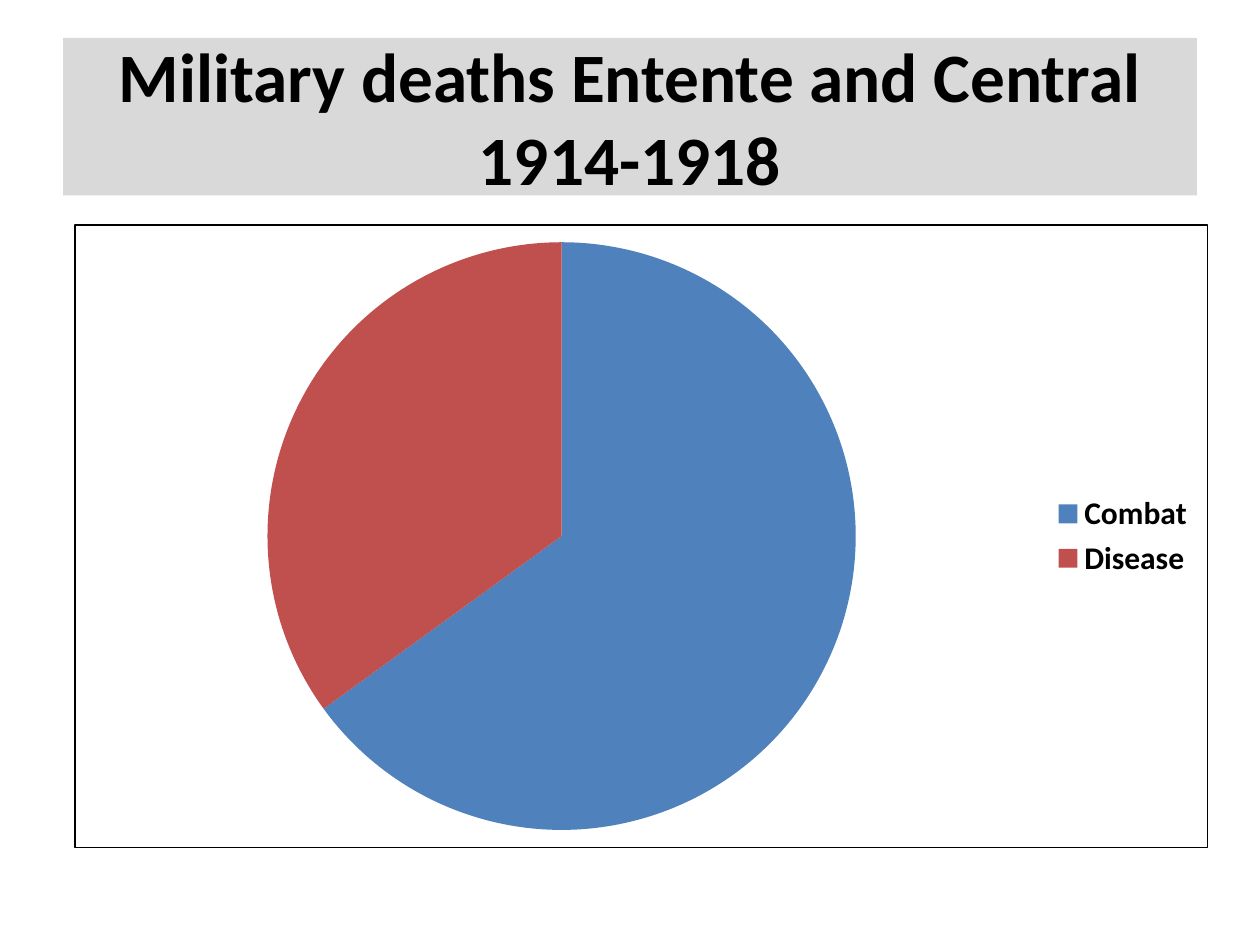
from dataclasses import dataclass

from lxml import etree
from pptx import Presentation
from pptx import util as u
from pptx.chart.data import CategoryChartData
from pptx.dml.color import RGBColor
from pptx.enum import chart as charts, text

TITLE = "Military deaths Entente and Central 1914-1918"
DEATHS = {"Combat": 65, "Disease": 35}
TITLE_BOX = (0.5, 0.3, 9, 1.25)
CHART_BOX = (0.59, 1.78, 9, 4.95)


@dataclass(frozen=True)
class Theme:
    font: str = "Calibri"
    ink: str = "000000"
    title_fill: str = "D9D9D9"
    slices: tuple = ("4F81BD", "C0504D")
    title_size: float = 39.6
    legend_size: float = 18
    border_width: float = 0.75


THEME = Theme()


def inches(box):
    return [u.Inches(length) for length in box]


def style_font(font, size):
    font.name = THEME.font
    font.size = u.Pt(size)
    font.bold = True
    font.color.rgb = RGBColor.from_string(THEME.ink)


def add_title(slide):
    title = slide.shapes.title
    title.left, title.top, title.width, title.height = inches(TITLE_BOX)
    title.fill.solid()
    title.fill.fore_color.rgb = RGBColor.from_string(THEME.title_fill)
    frame = title.text_frame
    frame.text = TITLE
    frame.word_wrap = True
    frame.auto_size = text.MSO_AUTO_SIZE.NONE
    frame.vertical_anchor = text.MSO_ANCHOR.MIDDLE
    paragraph = frame.paragraphs[0]
    paragraph.alignment = text.PP_ALIGN.CENTER
    style_font(paragraph.runs[0].font, THEME.title_size)


def add_border(chart):
    namespaces = (
        'xmlns:c="http://schemas.openxmlformats.org/drawingml/2006/chart" '
        'xmlns:a="http://schemas.openxmlformats.org/drawingml/2006/main"'
    )
    border = etree.fromstring(
        f'<c:spPr {namespaces}><a:noFill/><a:ln w="{u.Pt(THEME.border_width)}">'
        f'<a:solidFill><a:srgbClr val="{THEME.ink}"/></a:solidFill></a:ln></c:spPr>'
    )
    chart.element.find("{*}chart").addnext(border)


def add_deaths_chart(slide):
    data = CategoryChartData()
    data.categories = list(DEATHS)
    data.add_series("Series 1", list(DEATHS.values()))
    chart = slide.shapes.add_chart(
        charts.XL_CHART_TYPE.PIE, *inches(CHART_BOX), data
    ).chart
    chart.has_title = False
    style_font(chart.font, THEME.legend_size)
    chart.has_legend = True
    chart.legend.position = charts.XL_LEGEND_POSITION.RIGHT
    chart.legend.include_in_layout = False
    style_font(chart.legend.font, THEME.legend_size)
    plot = chart.plots[0]
    plot.vary_by_categories = True
    for index, color in enumerate(THEME.slices):
        fill = plot.series[0].points[index].format.fill
        fill.solid()
        fill.fore_color.rgb = RGBColor.from_string(color)
    add_border(chart)


def main():
    presentation = Presentation()
    presentation.slide_width = u.Inches(10)
    presentation.slide_height = u.Inches(7.5)
    slide = presentation.slides.add_slide(presentation.slide_layouts[5])
    add_title(slide)
    add_deaths_chart(slide)
    presentation.save("out.pptx")


if __name__ == "__main__":
    main()
